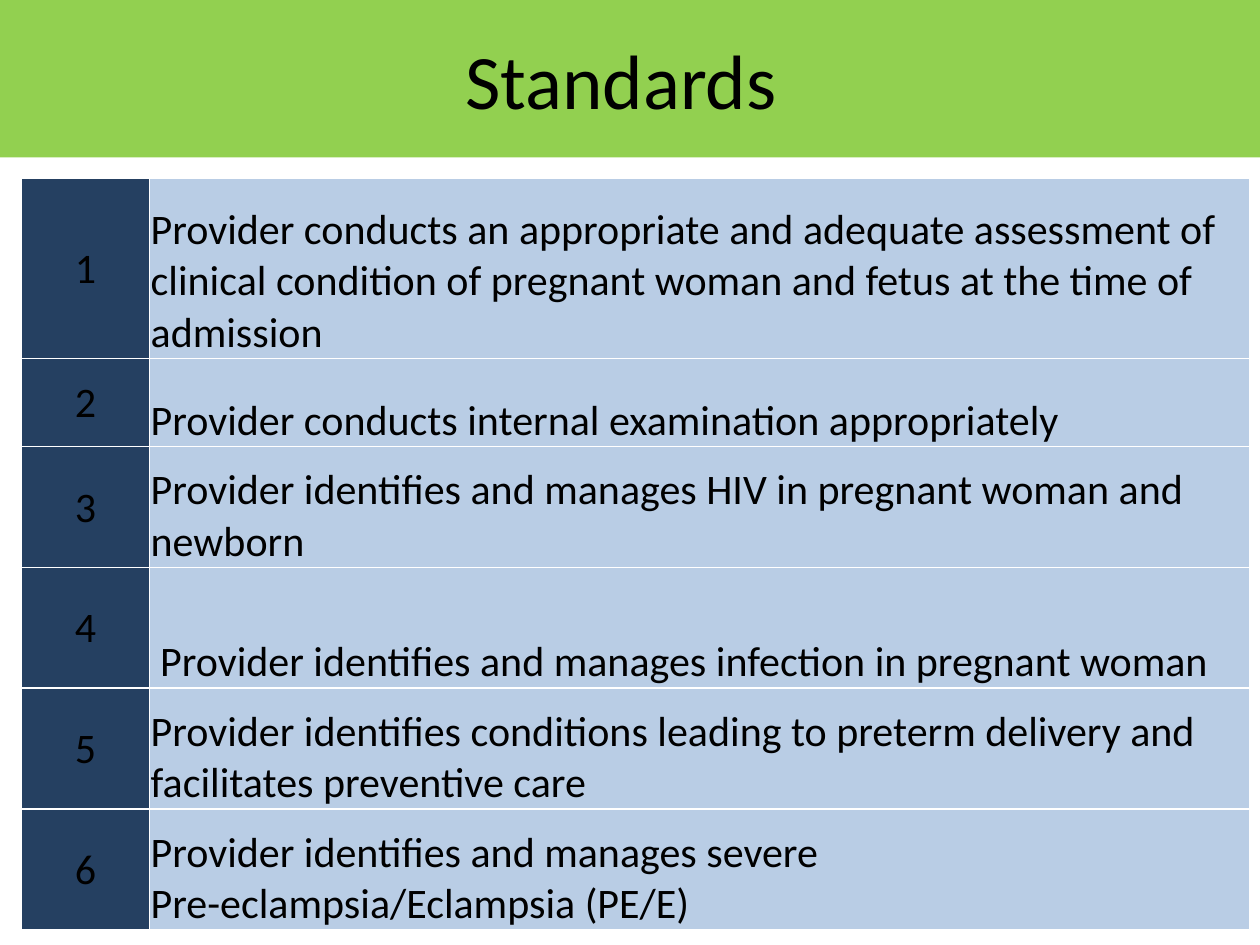
"""Build the slide listing the six provider standards."""
from lxml import etree
from pptx import Presentation
from pptx.dml.color import RGBColor
from pptx.enum import shapes, text
from pptx.oxml import ns
from pptx.util import Pt

COLORS = {"title": "92D050", "number": "254061", "standard": "B9CDE5",
          "text": "000000", "border": "FFFFFF"}
STANDARDS = [
    ("Provider conducts an appropriate and adequate assessment of clinical "
     "condition of pregnant woman and fetus at the time of admission", 102.9, 0.75),
    ("Provider conducts internal examination appropriately", 50.4, 0.75),
    ("Provider identifies and manages HIV in pregnant woman and newborn", 69, 0.75),
    ("Provider identifies and manages infection in pregnant woman", 69, 6.2),
    ("Provider identifies conditions leading to preterm delivery and "
     "facilitates preventive care", 69, 0.75),
    ("Provider identifies and manages severe Pre-eclampsia/Eclampsia (PE/E)", 69, 0.75),
]


def add_text(tf, content, size, align):
    p = tf.paragraphs[0]
    p.alignment = align
    r = p.add_run()
    r.text = content
    r.font.name = "Calibri"
    r.font.size = Pt(size)
    r.font.color.rgb = RGBColor.from_string(COLORS["text"])


def style_cell(cell, fill, anchor, left=0.75):
    cell.margin_left = Pt(left)
    cell.margin_right = cell.margin_top = Pt(0.75)
    cell.margin_bottom = 0
    cell.vertical_anchor = anchor
    tcPr = cell._tc.get_or_add_tcPr()
    for side in ("lnL", "lnR", "lnT", "lnB"):
        ln = etree.SubElement(tcPr, ns.qn(f"a:{side}"), w=str(Pt(1)))
        solid = etree.SubElement(ln, ns.qn("a:solidFill"))
        etree.SubElement(solid, ns.qn("a:srgbClr"), val=COLORS["border"])
    cell.fill.solid()
    cell.fill.fore_color.rgb = RGBColor.from_string(fill)


prs = Presentation()
prs.slide_width, prs.slide_height = Pt(720), Pt(540)
s = prs.slides.add_slide(prs.slide_layouts[6])

total = sum(height for _, height, _ in STANDARDS)
table = s.shapes.add_table(len(STANDARDS), 2, Pt(12.2), Pt(102),
                           Pt(702), Pt(total)).table
table.first_row = table.horz_banding = False
table.columns[0].width, table.columns[1].width = Pt(73.2), Pt(628.8)

for i, (standard, height, left) in enumerate(STANDARDS):
    table.rows[i].height = Pt(height)
    number_cell, standard_cell = table.cell(i, 0), table.cell(i, 1)
    style_cell(number_cell, COLORS["number"], text.MSO_ANCHOR.MIDDLE)
    add_text(number_cell.text_frame, str(i + 1), 24, text.PP_ALIGN.CENTER)
    style_cell(standard_cell, COLORS["standard"], text.MSO_ANCHOR.BOTTOM, left)
    add_text(standard_cell.text_frame, standard, 24, text.PP_ALIGN.LEFT)

title = s.shapes.add_shape(shapes.MSO_SHAPE.RECTANGLE, 0, 0, Pt(720), Pt(90))
title.shadow.inherit = False
title.fill.solid()
title.fill.fore_color.rgb = RGBColor.from_string(COLORS["title"])
title.line.fill.background()
tf = title.text_frame
tf.vertical_anchor = text.MSO_ANCHOR.MIDDLE
tf.margin_right = Pt(17.2)
add_text(tf, "Standards", 44, text.PP_ALIGN.CENTER)

prs.save("out.pptx")
